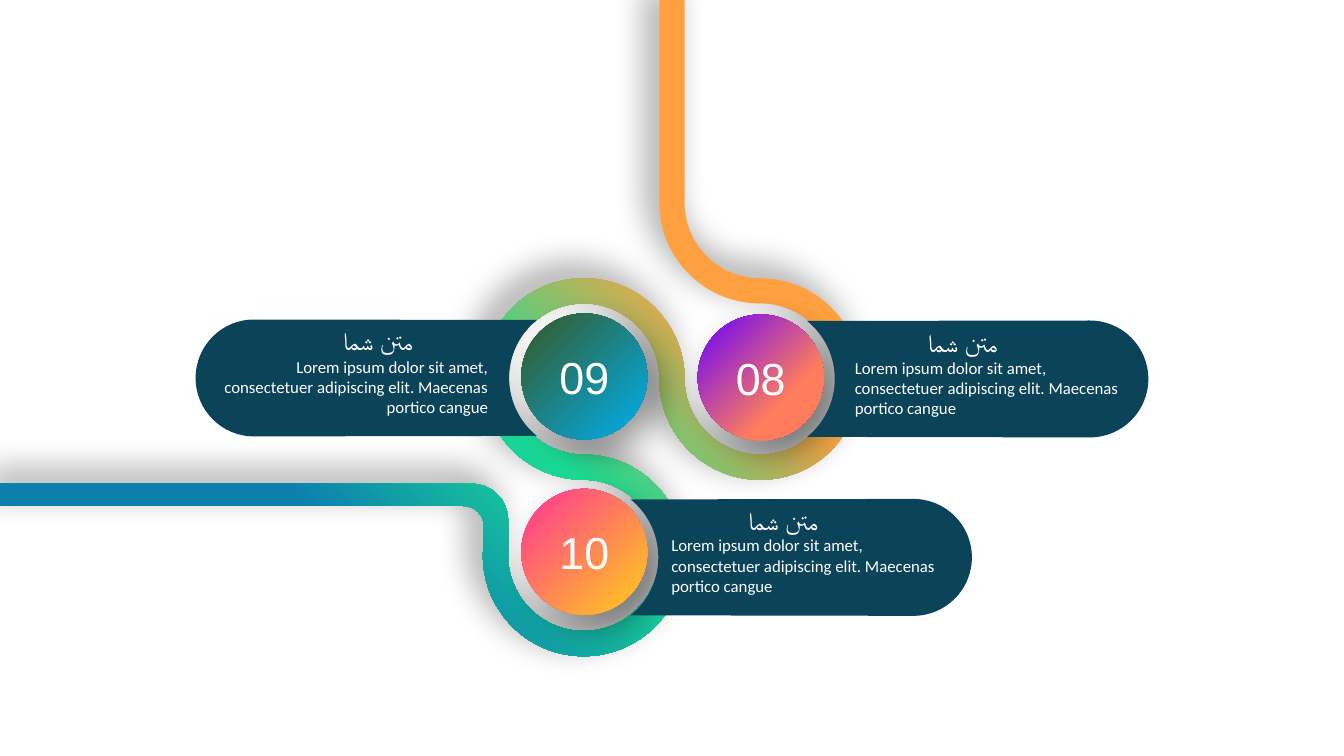
from math import ceil, cos, radians, sin, tan

from lxml.etree import SubElement
from pptx import Presentation
from pptx.dml.color import RGBColor
from pptx.enum.shapes import MSO_SHAPE
from pptx.enum.text import MSO_ANCHOR, MSO_AUTO_SIZE, PP_ALIGN
from pptx.oxml.ns import qn
from pptx.util import Emu, Pt

PX = 9144  # 100 px to the inch
WHITE, NAVY = "FFFFFF", "0B4359"
TITLE = "متن شما"
BODY = "Lorem ipsum dolor sit amet, consectetuer adipiscing elit. Maecenas portico cangue"
INNER, OUTER = 75, 100  # edge radii of the road's bends
CIRCLE = 125
RING, CAP, REACH = 74, 58, 327  # panel cut-out, round end, distance between them


def px(length):
    return Emu(round(length * PX))


def color(hex_code):
    return RGBColor.from_string(hex_code)


def trace_arc(center, radius, start, end):
    """A straight step to the arc, then Bézier curves of at most 90 degrees.

    Angles are in degrees clockwise from the right.
    """
    count = ceil(abs(end - start) / 90)
    sweep = radians(end - start) / count
    pull = radius * 4 / 3 * tan(sweep / 4)
    knots = []
    for i in range(count + 1):
        angle = radians(start) + i * sweep
        x, y = center[0] + radius * cos(angle), center[1] + radius * sin(angle)
        knots.append((x, y, -pull * sin(angle), pull * cos(angle)))
    steps = [[knots[0][:2]]]
    for (x1, y1, dx1, dy1), (x2, y2, dx2, dy2) in zip(knots, knots[1:]):
        steps.append([(x1 + dx1, y1 + dy1), (x2 - dx2, y2 - dy2), (x2, y2)])
    return steps


def add_outline(shapes, steps):
    """Closed outline; a step is one point for a line or three for a curve."""
    steps = [[(px(x), px(y)) for x, y in step] for step in steps]
    ends = [step[-1] for step in steps]
    builder = shapes.build_freeform(*ends[0], scale=1)
    builder.add_line_segments(ends[1:], close=True)
    shape = builder.convert_to_shape()
    shape.shadow.inherit = False
    shape.line.fill.background()
    # Write the curves in place of the straight segments
    trace = next(shape._element.spPr.iter(qn("a:path")))
    for child in list(trace):
        trace.remove(child)
    position = None
    for step in steps:
        if len(step) == 1 and step[0] == position:
            continue
        name = "moveTo" if position is None else "lnTo" if len(step) == 1 else "cubicBezTo"
        segment = SubElement(trace, qn("a:" + name))
        for x, y in step:
            SubElement(segment, qn("a:pt"), x=str(x - shape.left), y=str(y - shape.top))
        position = step[-1]
    SubElement(trace, qn("a:close"))
    return shape


def fill_gradient(shape, stops, angle=None):
    """Linear at the given angle, otherwise round from the lower right corner."""
    shape.fill.gradient()
    gradient = shape._element.spPr.find(qn("a:gradFill"))
    for child in list(gradient):
        gradient.remove(child)
    stop_list = SubElement(gradient, qn("a:gsLst"))
    for position, hex_code in stops:
        stop = SubElement(stop_list, qn("a:gs"), pos=str(position * 1000))
        SubElement(stop, qn("a:srgbClr"), val=hex_code)
    if angle is None:
        round_fill = SubElement(gradient, qn("a:path"), path="circle")
        SubElement(round_fill, qn("a:fillToRect"), l="100000", t="100000")
    else:
        SubElement(gradient, qn("a:lin"), ang=str(angle * 60000), scaled="0")


def add_shadow(shape, direction):
    effects = shape._element.spPr.find(qn("a:effectLst"))
    shadow = SubElement(effects, qn("a:outerShdw"), blurRad=str(Pt(25)), dist=str(Pt(12)),
                        dir=str(direction * 60000), algn="ctr", rotWithShape="0")
    shade = SubElement(shadow, qn("a:srgbClr"), val="000000")
    SubElement(shade, qn("a:alpha"), val="40000")


def write(frame, text, size, font="Arial", align=PP_ALIGN.CENTER):
    para = frame.paragraphs[0]
    para.alignment = align
    span = para.add_run()
    span.text = text
    span.font.size = Pt(size)
    span.font.name = font
    span.font.color.rgb = color(WHITE)
    # Persian letters take the complex-script font
    SubElement(span.font._element, qn("a:cs"), typeface=font)


def add_text(shapes, left, top, width, height, text, **style):
    box = shapes.add_textbox(px(left), px(top), px(width), px(height))
    box.text_frame.word_wrap = True
    box.text_frame.auto_size = MSO_AUTO_SIZE.SHAPE_TO_FIT_TEXT
    write(box.text_frame, text, **style)


def add_road(page):
    # Bends in order of travel: centre, start angle, end angle
    bends = [((754, 201), 180, 90), ((754, 376), -90, 180),
             ((579, 376), 0, -270), ((579, 551), -90, 180)]
    west, east = [], []
    for index, (center, start, end) in enumerate(bends):
        radii = (OUTER, INNER) if index % 2 == 0 else (INNER, OUTER)
        west.append((center, radii[0], start, end))
        east.append((center, radii[1], start, end))
    # Last corner before the straight to the left
    west.append(((468, 516), 36, 0, -90))
    east.append(((460, 522), 20, 0, -90))
    # Down one edge and back up the other
    steps = [[(654, 0)]]
    for bend in west:
        steps += trace_arc(*bend)
    steps += [[(0, 480)], [(0, 502)]]
    for center, radius, start, end in reversed(east):
        steps += trace_arc(center, radius, end, start)
    steps.append([(679, 0)])
    road = add_outline(page.shapes, steps)
    fill_gradient(road, [(30, "FFA140"), (50, "1BDD96"), (70, "0C7FAD")], angle=135)
    add_shadow(road, 225)


def add_circle(page, left, top, number, stops, angle=None):
    circle = page.shapes.add_shape(MSO_SHAPE.OVAL, px(left), px(top), px(CIRCLE), px(CIRCLE))
    circle.shadow.inherit = False
    circle.line.fill.background()
    fill_gradient(circle, stops, angle)
    add_shadow(circle, 45)
    circle.text_frame.vertical_anchor = MSO_ANCHOR.MIDDLE
    write(circle.text_frame, number, size=32)


def add_panel(page, hub, side, title_at, body_at, align):
    """Tab beside a circle; side is 1 for right and -1 for left."""
    x, y = hub
    tab = trace_arc((0, 0), RING, -51, 51) + trace_arc((REACH, 0), CAP, 90, -90)
    group = page.shapes.add_group_shape()
    panel = add_outline(group.shapes,
                        [[(x + side * dx, y + dy) for dx, dy in step] for step in tab])
    panel.fill.solid()
    panel.fill.fore_color.rgb = color(NAVY)
    add_text(group.shapes, *title_at, 241, 40, TITLE, size=18)
    add_text(group.shapes, *body_at, 283, 71, BODY, size=12, font="Calibri", align=align)


def main():
    deck = Presentation()
    deck.slide_width, deck.slide_height = px(1333), px(750)
    page = deck.slides.add_slide(deck.slide_layouts[6])

    # Winding road
    add_road(page)

    # Numbered circles
    add_circle(page, 692, 312, "08", [(31, "FF7D5D"), (100, "6600FF")])
    add_circle(page, 517, 311, "09", [(0, "385723"), (100, "00B0F0")], angle=45)
    add_circle(page, 517, 485, "10", [(11, "FFBF27"), (100, "FF3399")])

    # Text panels
    add_panel(page, (579, 375), -1, (254, 318), (211, 349), PP_ALIGN.RIGHT)
    add_panel(page, (754, 376), 1, (834, 320), (838, 350), PP_ALIGN.LEFT)
    add_panel(page, (579, 553), 1, (656, 496), (656, 526), PP_ALIGN.LEFT)

    deck.save("out.pptx")


if __name__ == "__main__":
    main()
